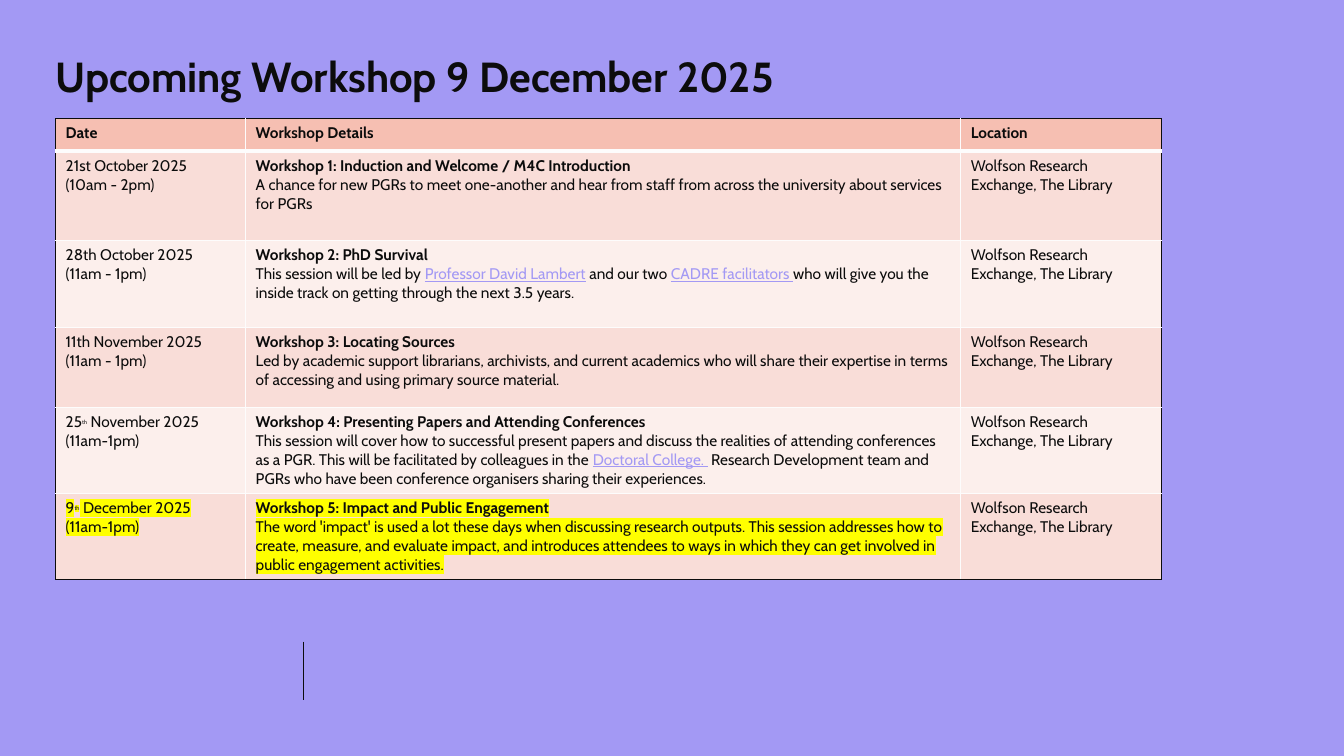
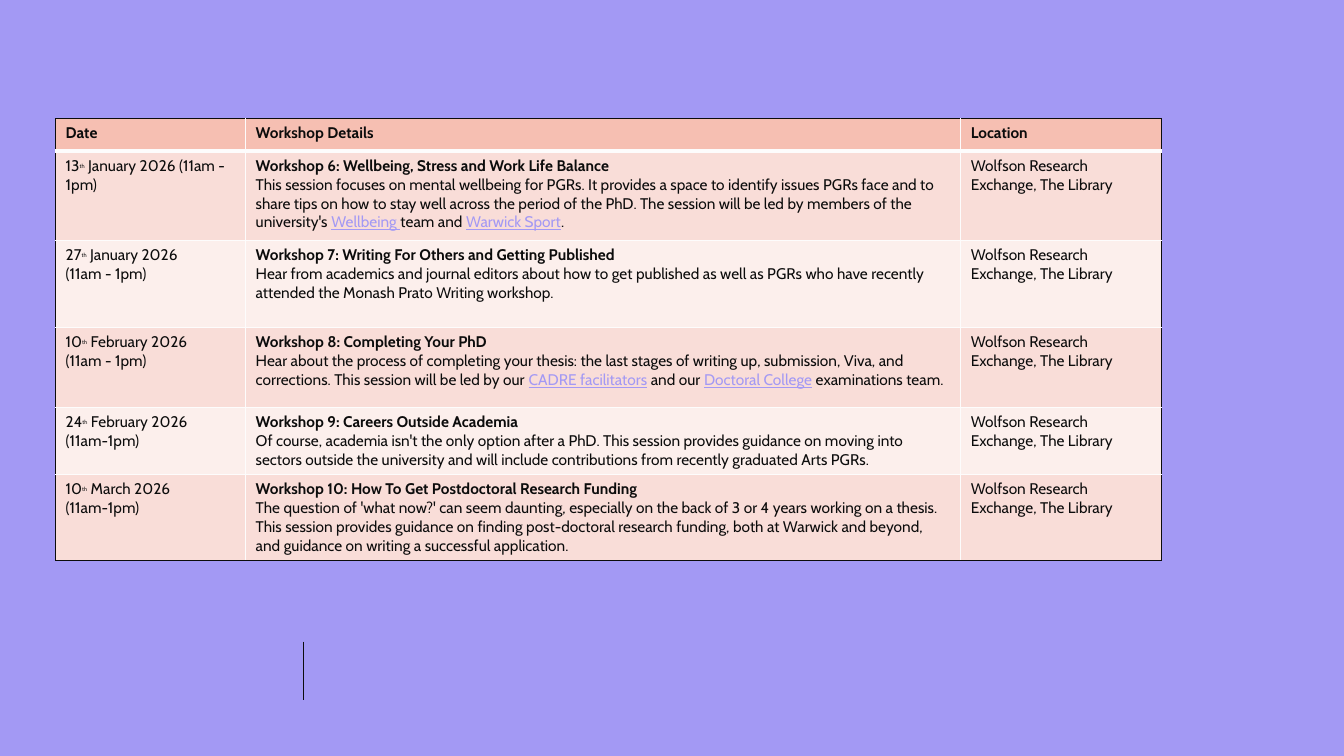
"""Build two slides that list the upcoming workshops in tables."""
import pptx
import pptx.util
import pptx.dml.color
import pptx.enum.shapes
import pptx.enum.text
import pptx.oxml
import pptx.oxml.ns

SCALE = 9525
FONT = "Cabin"
RGB = pptx.dml.color.RGBColor
LILAC = RGB(0xA3, 0x99, 0xF4)
INK = RGB(0x0C, 0x0C, 0x0C)
WHITE = RGB(0xFD, 0xFC, 0xFC)
CORAL = RGB(0xF6, 0xBF, 0xB2)
ROSE = RGB(0xF9, 0xDD, 0xD8)
BLUSH = RGB(0xFC, 0xEF, 0xEC)
YELLOW = RGB(0xFF, 0xFF, 0x00)

LEFT = 53
COLS = [181, 681, 191]
HEADS = ["Date", "Workshop Details", "Location"]
PLACE = "Wolfson Research Exchange, The Library"

AUTUMN = [
    (85, "21st October 2025\n(10am - 2pm)",
     "Workshop 1: Induction and Welcome / M4C Introduction",
     "A chance for new PGRs to meet one-another and hear from staff from across the university "
     "about services for PGRs"),
    (83, "28th October 2025\n(11am - 1pm)",
     "Workshop 2: PhD Survival",
     "This session will be led by |Professor David Lambert| and our two |CADRE facilitators |"
     "who will give you the inside track on getting through the next 3.5 years."),
    (76, "11th November 2025\n(11am - 1pm)",
     "Workshop 3: Locating Sources",
     "Led by academic support librarians, archivists, and current academics who will share their "
     "expertise in terms of accessing and using primary source material."),
    (82, "25|th| November 2025 (11am-1pm)",
     "Workshop 4: Presenting Papers and Attending Conferences",
     "This session will cover how to successful present papers and discuss the realities of "
     "attending conferences as a PGR. This will be facilitated by colleagues in the "
     "|Doctoral College. | Research Development team and PGRs who have been conference "
     "organisers sharing their experiences."),
    (82, "9|th| December 2025 (11am-1pm)",
     "Workshop 5: Impact and Public Engagement",
     "The word 'impact' is used a lot these days when discussing research outputs. This session "
     "addresses how to create, measure, and evaluate impact, and introduces attendees to ways "
     "in which they can get involved in public engagement activities."),
]
SPRING = [
    (85, "13|th| January 2026 (11am - 1pm)",
     "Workshop 6: Wellbeing, Stress and Work Life Balance",
     "This session focuses on mental wellbeing for PGRs. It provides a space to identify issues "
     "PGRs face and to share tips on how to stay well across the period of the PhD. The session "
     "will be led by members of the university's |Wellbeing |team and |Warwick Sport|."),
    (83, "27|th| January 2026\n(11am - 1pm)",
     "Workshop 7: Writing For Others and Getting Published",
     "Hear from academics and journal editors about how to get published as well as PGRs who "
     "have recently attended the Monash Prato Writing workshop."),
    (76, "10|th| February 2026\n(11am - 1pm)",
     "Workshop 8: Completing Your PhD",
     "Hear about the process of completing your thesis: the last stages of writing up, "
     "submission, Viva, and corrections. This session will be led by our |CADRE facilitators| "
     "and our |Doctoral College| examinations team."),
    (64, "24|th| February 2026 (11am-1pm)",
     "Workshop 9: Careers Outside Academia",
     "Of course, academia isn't the only option after a PhD. This session provides guidance on "
     "moving into sectors outside the university and will include contributions from recently "
     "graduated Arts PGRs."),
    (82, "10|th| March 2026 (11am-1pm)",
     "Workshop 10: How To Get Postdoctoral Research Funding",
     "The question of 'what now?' can seem daunting, especially on the back of 3 or 4 years "
     "working on a thesis. This session provides guidance on finding post-doctoral research "
     "funding, both at Warwick and beyond, and guidance on writing a successful application."),
]


def px(num):
    """Turn pixels into EMU."""
    return pptx.util.Emu(num * SCALE)


def style(font, size, bold=False, color=INK):
    """Set the face, size, weight and colour of a font."""
    font.name = FONT
    font.size = pptx.util.Pt(size)
    font.bold = bold
    font.color.rgb = color


def mark(run):
    """Highlight a run."""
    fill = run.font._element.find(pptx.oxml.ns.qn("a:solidFill"))
    fill.addnext(pptx.oxml.parse_xml(
        f'<a:highlight {pptx.oxml.ns.nsdecls("a")}><a:srgbClr val="{YELLOW}"/></a:highlight>'))


def link(run):
    """Give a run the look of a link."""
    run.font.color.rgb = LILAC
    run.font.underline = True


def raise_up(run):
    """Make a run a small superscript."""
    run.font.size = pptx.util.Pt(7)
    run.font._element.set("baseline", "30000")


def write(cell, lines, accent=link, bolds=(), lit=False):
    """Fill a cell with lines; text between bars gets the accent."""
    frame = cell.text_frame
    for row, line in enumerate(lines):
        par = frame.add_paragraph() if row else frame.paragraphs[0]
        par.line_spacing = pptx.util.Pt(13.5)
        for part, text in enumerate(line.split("|")):
            run = par.add_run()
            run.text = text
            style(run.font, 11, row in bolds)
            if part % 2:
                accent(run)
            if lit:
                mark(run)


def edge(cell, side, color, width):
    """Draw one border of a cell."""
    cell._tc.get_or_add_tcPr().append(pptx.oxml.parse_xml(
        f'<a:ln{side} {pptx.oxml.ns.nsdecls("a")} w="{pptx.util.Pt(width)}">'
        f'<a:solidFill><a:srgbClr val="{color}"/></a:solidFill></a:ln{side}>'))


def paint(table):
    """Set the borders and fills of all cells."""
    last_row, last_col = len(table.rows) - 1, len(table.columns) - 1
    for row in range(last_row + 1):
        for col in range(last_col + 1):
            cell = table.cell(row, col)
            sides = [("L", col == 0, False), ("R", col == last_col, False),
                     ("T", row == 0, row == 1), ("B", row == last_row, row == 0)]
            for side, outer, thick in sides:
                edge(cell, side, INK if outer else WHITE, 2.89 if thick else 0.96)
            cell.fill.solid()
            cell.fill.fore_color.rgb = (ROSE if row % 2 else BLUSH) if row else CORAL


def add_list(slide, shops, lit=None):
    """Add the table of workshops, with one row lit if asked."""
    tall = [31] + [shop[0] for shop in shops]
    table = slide.shapes.add_table(len(tall), len(COLS), px(LEFT), px(113),
                                   px(sum(COLS)), px(sum(tall))).table
    table.horz_banding = False
    for col, wide in zip(table.columns, COLS):
        col.width = px(wide)
    for row, high in zip(table.rows, tall):
        row.height = px(high)
    for col, head in enumerate(HEADS):
        write(table.cell(0, col), [head], bolds=(0,))
    for row, (_, date, name, body) in enumerate(shops, 1):
        glow = row == lit
        write(table.cell(row, 0), date.split("\n"), raise_up, lit=glow)
        write(table.cell(row, 1), [name, body], bolds=(0,), lit=glow)
        write(table.cell(row, 2), [PLACE])
    paint(table)


def add_title(slide, text):
    """Place and format the title."""
    title = slide.shapes.title
    title.left, title.top, title.width, title.height = px(LEFT), px(57), px(1054), px(40)
    frame = title.text_frame
    frame.text = text
    frame.margin_left = frame.margin_top = frame.margin_right = frame.margin_bottom = 0
    frame.vertical_anchor = pptx.enum.text.MSO_ANCHOR.TOP
    par = frame.paragraphs[0]
    par.alignment = pptx.enum.text.PP_ALIGN.LEFT
    par.line_spacing = 0.8
    style(par.runs[0].font, 30, True)


def add_rule(slide):
    """Add the short upright line at the foot."""
    rule = slide.shapes.add_connector(pptx.enum.shapes.MSO_CONNECTOR.STRAIGHT,
                                      px(289), px(611), px(289), px(667))
    rule.line.color.rgb = INK
    rule.line.width = pptx.util.Pt(1)
    rule._element.spPr.append(pptx.oxml.parse_xml(
        f'<a:effectLst {pptx.oxml.ns.nsdecls("a")}/>'))


def add_page(deck, shops, title=None, lit=None):
    """Add a slide with its rule, title and table."""
    slide = deck.slides.add_slide(deck.slide_layouts[5 if title else 6])
    add_rule(slide)
    if title:
        add_title(slide, title)
    add_list(slide, shops, lit)


def main():
    """Build and save the deck."""
    deck = pptx.Presentation()
    deck.slide_width, deck.slide_height = px(1280), px(720)
    back = deck.slide_master.background.fill
    back.solid()
    back.fore_color.rgb = LILAC
    add_page(deck, AUTUMN, "Upcoming Workshop 9 December 2025", lit=5)
    add_page(deck, SPRING)
    deck.save("out.pptx")


if __name__ == "__main__":
    main()
